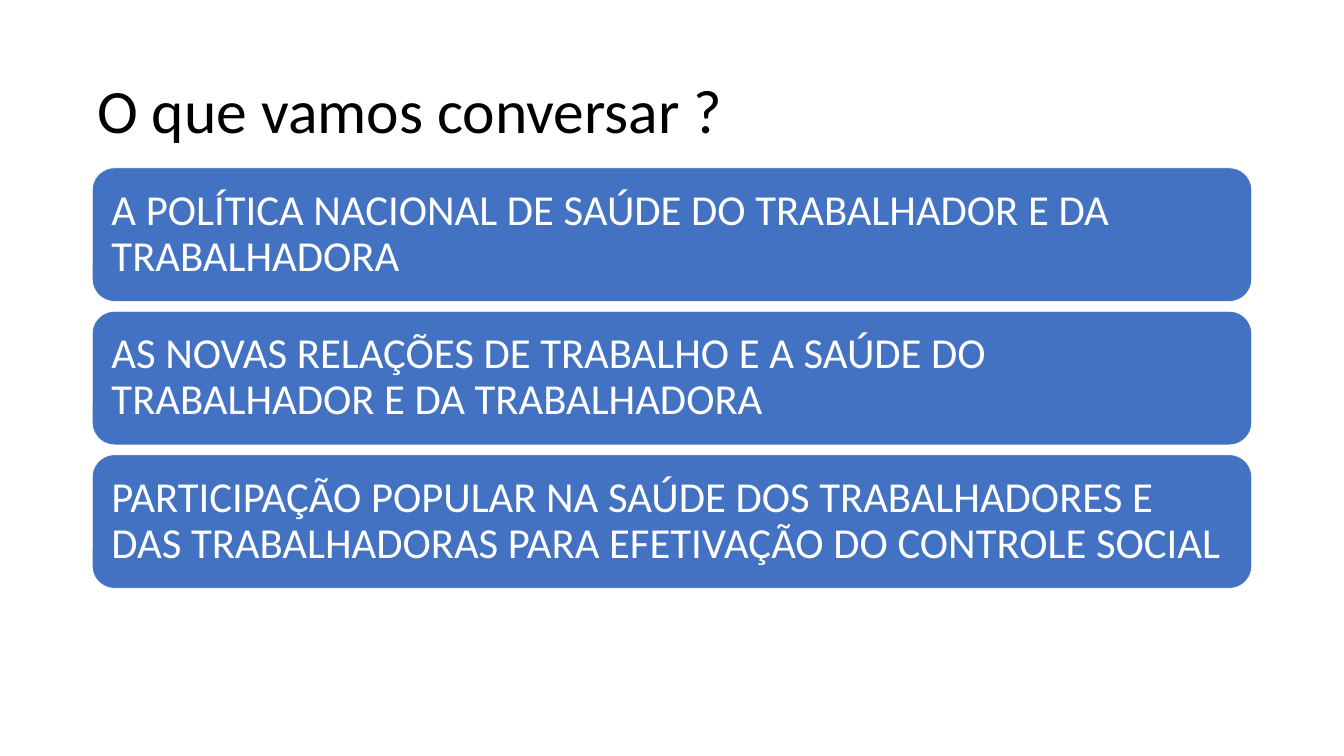
from dataclasses import dataclass

from pptx import Presentation
from pptx import util as u
from pptx.dml.color import RGBColor
from pptx.enum import shapes, text

COLORS = {"title": "000000", "bar": "4372C3", "white": "FFFFFF"}
FONT = "Calibri"
LEFT, WIDTH = 4.65, 58.42
BAR_TOP, BAR_HEIGHT, BAR_GAP = 8.46, 6.73, 0.5


@dataclass
class Topic:
    label: str
    top: float


LABELS = [
    "A POLÍTICA NACIONAL DE SAÚDE DO TRABALHADOR E DA TRABALHADORA",
    "AS NOVAS RELAÇÕES DE TRABALHO E A SAÚDE DO TRABALHADOR E DA TRABALHADORA",
    "PARTICIPAÇÃO POPULAR NA SAÚDE DOS TRABALHADORES E DAS TRABALHADORAS "
    "PARA EFETIVAÇÃO DO CONTROLE SOCIAL",
]
TOPICS = [
    Topic(label, BAR_TOP + i * (BAR_HEIGHT + BAR_GAP))
    for i, label in enumerate(LABELS)
]


def rgb(name: str) -> RGBColor:
    return RGBColor.from_string(COLORS[name])


def write(sp, label: str, size: int, color: str, inset_x: float, inset_y: float) -> None:
    tf = sp.text_frame
    tf.word_wrap = True
    tf.vertical_anchor = text.MSO_ANCHOR.MIDDLE
    tf.margin_left = tf.margin_right = u.Cm(inset_x)
    tf.margin_top = tf.margin_bottom = u.Cm(inset_y)
    p = tf.paragraphs[0]
    p.alignment = text.PP_ALIGN.LEFT
    p.line_spacing = 0.9
    r = p.add_run()
    r.text = label
    r.font.name = FONT
    r.font.size = u.Pt(size)
    r.font.color.rgb = rgb(color)


def add_title(s, label: str) -> None:
    sp = s.shapes.add_textbox(u.Cm(LEFT), u.Cm(2.03), u.Cm(WIDTH), u.Cm(7.37))
    write(sp, label, 88, "title", 0.25, 0.13)


def add_topic(s, topic: Topic) -> None:
    sp = s.shapes.add_shape(
        shapes.MSO_SHAPE.ROUNDED_RECTANGLE,
        u.Cm(LEFT), u.Cm(topic.top), u.Cm(WIDTH), u.Cm(BAR_HEIGHT),
    )
    sp.shadow.inherit = False
    sp.fill.solid()
    sp.fill.fore_color.rgb = rgb("bar")
    sp.line.color.rgb = rgb("white")
    sp.line.width = u.Pt(1)
    write(sp, topic.label, 61, "white", 0.64, 0.64)


def main() -> None:
    prs = Presentation()
    prs.slide_width, prs.slide_height = u.Cm(67.72), u.Cm(38.1)
    s = prs.slides.add_slide(prs.slide_layouts[6])
    add_title(s, "O que vamos conversar ?")
    for topic in TOPICS:
        add_topic(s, topic)
    prs.save("out.pptx")


if __name__ == "__main__":
    main()
